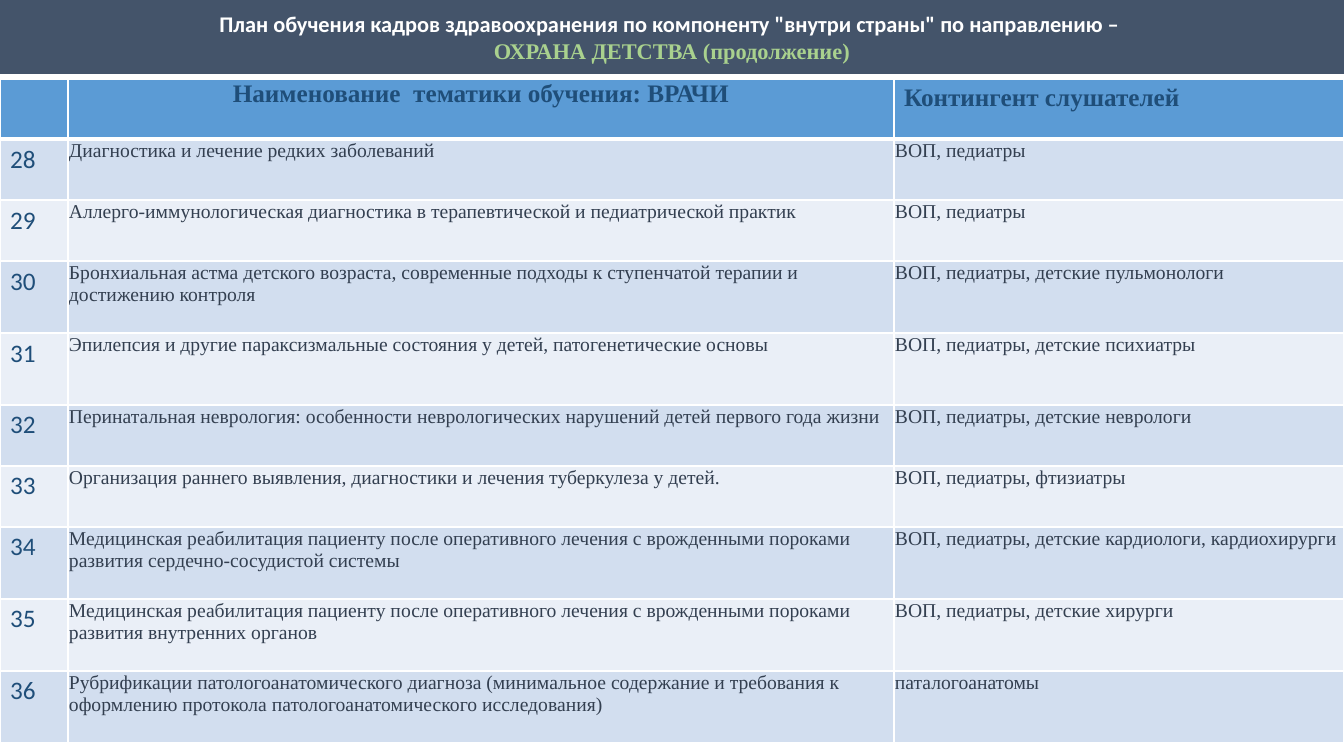
from lxml.etree import SubElement
from pptx import Presentation
from pptx.dml.color import RGBColor
from pptx.enum.text import MSO_ANCHOR as Anchor, MSO_AUTO_SIZE as AutoSize, PP_ALIGN as Align
from pptx.oxml.ns import qn
from pptx.util import Pt

HEADING = [
    ('План обучения кадров здравоохранения по компоненту "внутри страны" по направлению – ', "Calibri", "FFFFFF"),
    ("ОХРАНА ДЕТСТВА (продолжение)", "Times New Roman", "A9D18E"),
]
COLUMN_TITLES = ["", "Наименование  тематики обучения: ВРАЧИ", "Контингент слушателей"]
FIRST_NUMBER = 28
COURSES = [
    ("Диагностика и лечение редких заболеваний", "ВОП, педиатры", 61),
    ("Аллерго-иммунологическая диагностика в терапевтической и педиатрической практик", "ВОП, педиатры", 61),
    ("Бронхиальная астма детского возраста, современные подходы к ступенчатой терапии и достижению контроля",
     "ВОП, педиатры, детские пульмонологи", 72),
    ("Эпилепсия и другие параксизмальные состояния у детей, патогенетические основы",
     "ВОП, педиатры, детские психиатры", 72),
    ("Перинатальная неврология: особенности неврологических нарушений детей первого года жизни",
     "ВОП, педиатры, детские неврологи", 61),
    ("Организация раннего выявления, диагностики и лечения туберкулеза у детей.", "ВОП, педиатры, фтизиатры", 61),
    ("Медицинская реабилитация пациенту после оперативного лечения с врожденными пороками "
     "развития сердечно-сосудистой системы", "ВОП, педиатры, детские кардиологи, кардиохирурги", 72),
    ("Медицинская реабилитация пациенту после оперативного лечения с врожденными пороками "
     "развития внутренних органов", "ВОП, педиатры, детские хирурги", 72),
    ("Рубрификации патологоанатомического диагноза (минимальное содержание и требования к "
     "оформлению протокола патологоанатомического исследования)", "паталогоанатомы", 72),
]
SLIDE_WIDTH, SLIDE_HEIGHT = 1344, 756
HEADING_HEIGHT, TABLE_TOP, HEADER_HEIGHT = 74, 79, 60
COLUMN_WIDTHS = [68, 826, 450]
HEADER_FILL, BAND_FILLS = "5B9BD5", ["D2DEEF", "EAEFF7"]
NAVY, SLATE = "1F4E79", "333F50"


def px(length):
    return round(length * 914400 / 100.8)


def color(code):
    return RGBColor.from_string(code)


def add_run(paragraph, text, size, font, code, bold=False):
    run = paragraph.add_run()
    run.text = text
    run.font.size = Pt(size)
    run.font.name = font
    run.font.bold = bold
    run.font.color.rgb = color(code)


def add_border(cell, side, width):
    line = SubElement(cell._tc.get_or_add_tcPr(), qn(f"a:ln{side}"), w=str(Pt(width)))
    SubElement(SubElement(line, qn("a:solidFill")), qn("a:srgbClr"), val="FFFFFF")


def style_cell(cell, fill, top=1, bottom=1):
    for side, width in (("L", 1), ("R", 1), ("T", top), ("B", bottom)):
        add_border(cell, side, width)
    cell.fill.solid()
    cell.fill.fore_color.rgb = color(fill)


def tighten(cell):
    cell.margin_left = cell.margin_right = cell.margin_top = px(1)
    cell.margin_bottom = 0


def build_heading(slide):
    heading = slide.shapes.title
    heading.left, heading.top, heading.width, heading.height = 0, 0, px(SLIDE_WIDTH), px(HEADING_HEIGHT)
    heading.fill.solid()
    heading.fill.fore_color.rgb = color("44546A")
    frame = heading.text_frame
    frame.word_wrap = True
    frame.auto_size = AutoSize.NONE
    frame.vertical_anchor = Anchor.MIDDLE
    for index, (text, font, code) in enumerate(HEADING):
        paragraph = frame.add_paragraph() if index else frame.paragraphs[0]
        paragraph.alignment = Align.CENTER
        add_run(paragraph, text, 16, font, code, True)


def build_plan(slide):
    heights = [HEADER_HEIGHT] + [height for _, _, height in COURSES]
    plan = slide.shapes.add_table(
        len(heights), len(COLUMN_WIDTHS), 0, px(TABLE_TOP), px(SLIDE_WIDTH), px(sum(heights))).table
    plan.horz_banding = False
    for column, width in zip(plan.columns, COLUMN_WIDTHS):
        column.width = px(width)
    for row, height in zip(plan.rows, heights):
        row.height = px(height)

    for index, title in enumerate(COLUMN_TITLES):
        cell = plan.cell(0, index)
        style_cell(cell, HEADER_FILL, bottom=3)
        if title:
            add_run(cell.text_frame.paragraphs[0], title, 18, "Times New Roman", NAVY, True)
    topic_header = plan.cell(0, 1)
    tighten(topic_header)
    topic_header.text_frame.paragraphs[0].alignment = Align.CENTER

    for index, (topic, audience, _) in enumerate(COURSES):
        for column, text in enumerate([str(FIRST_NUMBER + index), topic, audience]):
            cell = plan.cell(index + 1, column)
            style_cell(cell, BAND_FILLS[index % 2], top=1 if index else 3)
            paragraph = cell.text_frame.paragraphs[0]
            if column:
                tighten(cell)
                add_run(paragraph, text, 14, "Times New Roman", SLATE)
            else:
                add_run(paragraph, text, 18, "Calibri", NAVY)


def main():
    deck = Presentation()
    deck.slide_width, deck.slide_height = px(SLIDE_WIDTH), px(SLIDE_HEIGHT)
    slide = deck.slides.add_slide(deck.slide_layouts[5])
    build_heading(slide)
    build_plan(slide)
    deck.save("out.pptx")


if __name__ == "__main__":
    main()
